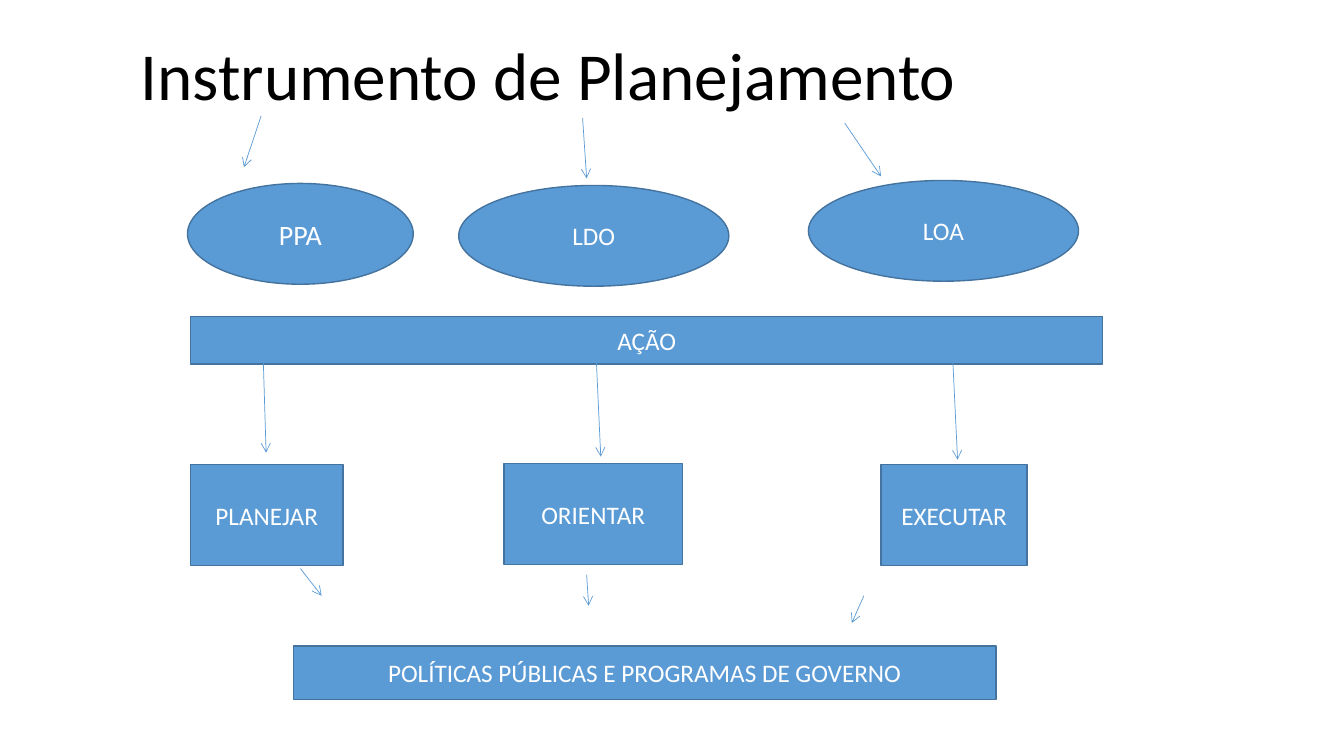
from lxml import etree
from pptx import Presentation
from pptx.dml.color import RGBColor
from pptx.enum.shapes import MSO_CONNECTOR, MSO_SHAPE
from pptx.enum.text import MSO_ANCHOR, PP_ALIGN
from pptx.oxml.ns import qn
from pptx.util import Inches, Pt

ELLIPSE = MSO_SHAPE.OVAL
RECTANGLE = MSO_SHAPE.RECTANGLE
STRAIGHT = MSO_CONNECTOR.STRAIGHT
MIDDLE = MSO_ANCHOR.MIDDLE
CENTER = PP_ALIGN.CENTER

BLUE = RGBColor(0x5B, 0x9B, 0xD5)
OUTLINE = RGBColor(0x43, 0x73, 0x9E)
BLACK = RGBColor(0, 0, 0)
WHITE = RGBColor(255, 255, 255)

FONT = "Calibri"
WIDTH = Inches(13.333)
HEIGHT = Inches(7.5)
NODE_HEIGHT = 13.33
BAR_LEFT = 14.18

INSTRUMENTS = [
    ("PPA", 13.95, 24.27, 16.8, 20),
    ("LDO", 34.13, 24.53, 20.1, 18),
    ("LOA", 60.15, 23.87, 20.1, 18),
]
ACTIONS = [
    ("PLANEJAR", BAR_LEFT, 61.47, 11.33),
    ("ORIENTAR", 37.5, 61.33, 13.28),
    ("EXECUTAR", 65.55, 61.47, 10.88),
]
TITLE_ARROWS = [
    (19.43, 15.33, 18.15, 22.13),
    (43.35, 15.6, 43.65, 23.6),
    (62.85, 16.27, 65.55, 23.33),
]
ACTION_ARROWS = [
    (19.5, 42.27, 19.8, 59.87),
    (44.25, 42.93, 44.7, 60.4),
    (70.8, 44.27, 71.25, 60.8),
]
POLICY_ARROWS = [
    (22.35, 75.2, 23.93, 78.8),
    (43.65, 76, 43.8, 80.13),
    (64.28, 78.8, 63.38, 82.4),
]


def across(percent):
    return round(WIDTH * percent / 100)


def down(percent):
    return round(HEIGHT * percent / 100)


def place(left, top, width, height):
    return across(left), down(top), across(width), down(height)


def write(box, text, size, color):
    frame = box.text_frame
    frame.word_wrap = True
    frame.vertical_anchor = MIDDLE
    para = frame.paragraphs[0]
    para.alignment = CENTER
    span = para.add_run()
    span.text = text
    span.font.name = FONT
    span.font.size = Pt(size)
    span.font.color.rgb = color
    return para


def add_title(page, text):
    box = page.shapes.add_textbox(*place(5.55, 0.8, 70.5, 19.2))
    write(box, text, 48, BLACK).line_spacing = 0.9


def add_node(page, kind, text, left, top, width, height=NODE_HEIGHT, size=18):
    node = page.shapes.add_shape(kind, *place(left, top, width, height))
    node.shadow.inherit = False
    node.fill.solid()
    node.fill.fore_color.rgb = BLUE
    node.line.color.rgb = OUTLINE
    node.line.width = Pt(1)
    write(node, text, size, WHITE)


def add_arrow(page, start_x, start_y, end_x, end_y):
    arrow = page.shapes.add_connector(
        STRAIGHT, across(start_x), down(start_y), across(end_x), down(end_y)
    )
    arrow.line.color.rgb = BLUE
    arrow.line.width = Pt(0.5)
    properties = arrow.line._get_or_add_ln()
    etree.SubElement(properties, qn("a:tailEnd"), type="arrow")
    etree.SubElement(arrow._element.spPr, qn("a:effectLst"))


def main():
    deck = Presentation()
    deck.slide_width = WIDTH
    deck.slide_height = HEIGHT
    page = deck.slides.add_slide(deck.slide_layouts[6])

    add_title(page, "Instrumento de Planejamento")
    for text, left, top, width, size in INSTRUMENTS:
        add_node(page, ELLIPSE, text, left, top, width, size=size)
    add_node(page, RECTANGLE, "AÇÃO", BAR_LEFT, 41.87, 67.88, 6.27)
    for action in ACTIONS:
        add_node(page, RECTANGLE, *action)
    add_node(page, RECTANGLE, "POLÍTICAS PÚBLICAS E PROGRAMAS DE GOVERNO",
             21.83, 85.47, 52.28, 7.07)
    for ends in TITLE_ARROWS + ACTION_ARROWS + POLICY_ARROWS:
        add_arrow(page, *ends)

    deck.save("out.pptx")


if __name__ == "__main__":
    main()
